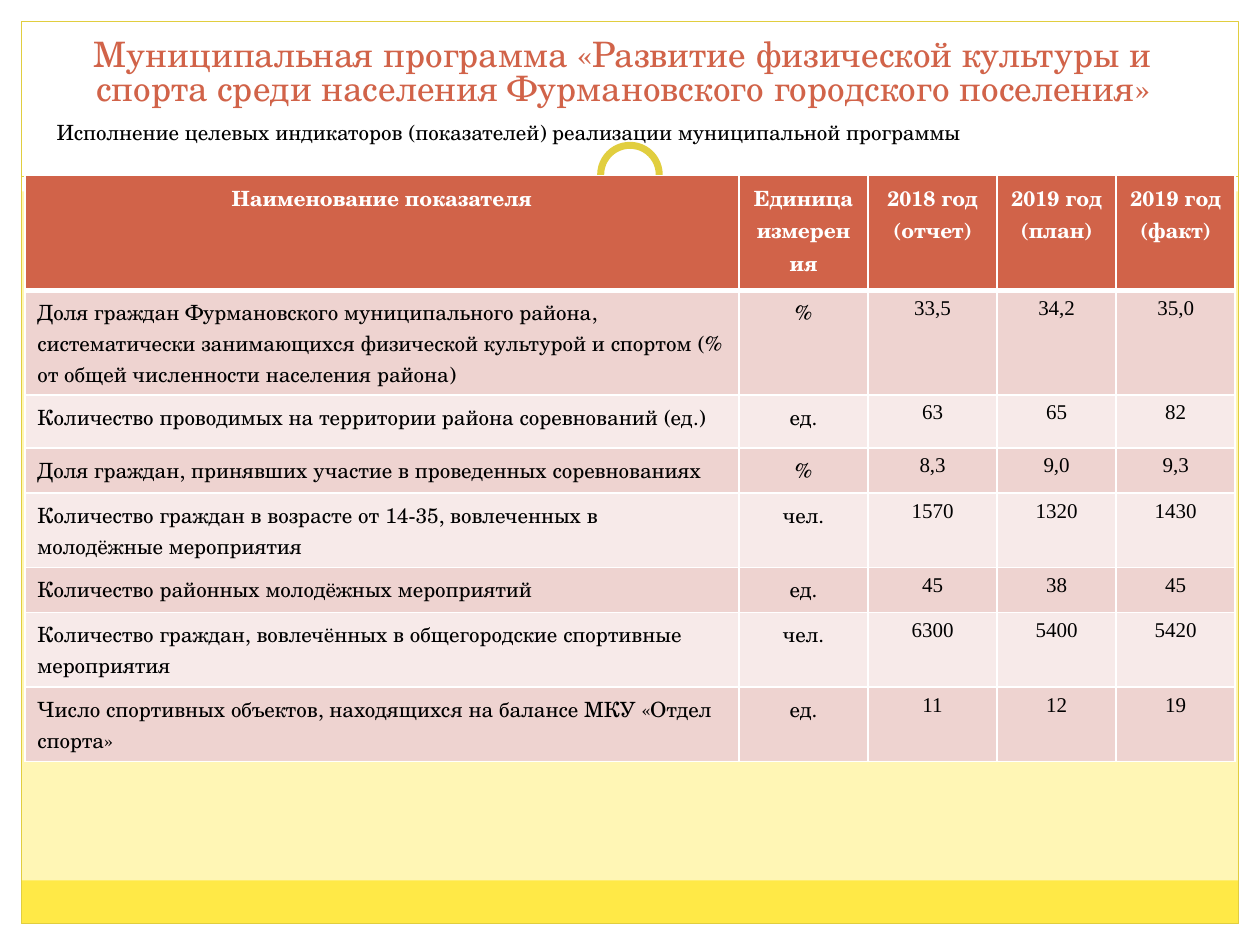
from lxml.etree import SubElement
from pptx import Presentation
from pptx.dml.color import RGBColor
from pptx.enum.dml import MSO_LINE
from pptx.enum.shapes import MSO_CONNECTOR, MSO_SHAPE
from pptx.enum.text import MSO_ANCHOR, PP_ALIGN
from pptx.oxml.ns import qn
from pptx.util import Cm, Pt

SERIF, NUMERIC = "TeX Gyre Schola", "Times New Roman"
WHITE, BLACK, RUST = "FFFFFF", "000000", "D16349"
GOLD, YELLOW, CREAM = "E1CE3F", "FFE947", "FFF6B5"
BANDS = ("EED3D0", "F7EAE9")
W, H, EDGE = 25.4, 19.05, 0.43

COL_WIDTHS = (14.4, 2.6, 2.6, 2.4, 2.4)
ROW_HEIGHTS = (2.31, 2.11, 1.07, 0.91, 1.5, 0.91, 1.5, 1.5)
ROWS = (
    ("Наименование показателя", "Единица измерения", "2018 год (отчет)",
     "2019 год (план)", "2019 год (факт)"),
    ("Доля граждан Фурмановского муниципального района, систематически "
     "занимающихся физической культурой и спортом (% от общей численности "
     "населения района)", "%", "33,5", "34,2", "35,0"),
    ("Количество проводимых на территории района соревнований (ед.)",
     "ед.", "63", "65", "82"),
    ("Доля граждан, принявших участие в проведенных соревнованиях",
     "%", "8,3", "9,0", "9,3"),
    ("Количество граждан в возрасте от 14-35, вовлеченных в молодёжные "
     "мероприятия", "чел.", "1570", "1320", "1430"),
    ("Количество районных молодёжных мероприятий", "ед.", "45", "38", "45"),
    ("Количество граждан, вовлечённых в общегородские спортивные "
     "мероприятия", "чел.", "6300", "5400", "5420"),
    ("Число спортивных объектов, находящихся на балансе МКУ «Отдел спорта»",
     "ед.", "11", "12", "19"),
)


def rgb(color):
    return RGBColor.from_string(color)


def box(left, top, width, height):
    return Cm(left), Cm(top), Cm(width), Cm(height)


def add_shape(s, kind, bounds, fill=None, line=None, weight=0.75):
    sp = s.shapes.add_shape(kind, *box(*bounds))
    sp.shadow.inherit = False
    if fill:
        sp.fill.solid()
        sp.fill.fore_color.rgb = rgb(fill)
    else:
        sp.fill.background()
    if line:
        sp.line.color.rgb = rgb(line)
        sp.line.width = Pt(weight)
    else:
        sp.line.fill.background()


def add_dashed_line(s, left, right, y):
    line = s.shapes.add_connector(MSO_CONNECTOR.STRAIGHT, Cm(left), Cm(y),
                                  Cm(right), Cm(y))
    line.line.color.rgb = rgb(GOLD)
    line.line.width = Pt(0.75)
    line.line.dash_style = MSO_LINE.SQUARE_DOT
    SubElement(line.element.spPr, qn("a:effectLst"))


def write(tf, text, size, color, align, font=SERIF, bold=False):
    tf.text = text
    p = tf.paragraphs[0]
    p.alignment = align
    f = p.runs[0].font
    f.name, f.size, f.bold = font, Pt(size), bold
    f.color.rgb = rgb(color)
    return p


def set_borders(cell, bottom):
    tc_pr = cell._tc.get_or_add_tcPr()
    for side in "LRTB":
        width = bottom if side == "B" else 1
        ln = SubElement(tc_pr, qn(f"a:ln{side}"), w=str(Pt(width)))
        fill = SubElement(ln, qn("a:solidFill"))
        SubElement(fill, qn("a:srgbClr"), val=WHITE)


def add_frame(s):
    rect, oval = MSO_SHAPE.RECTANGLE, MSO_SHAPE.OVAL
    # White margins and header band
    for bounds in ((0, H - EDGE, W, EDGE), (0, 0, W, 3.86),
                   (0, 0, EDGE, H), (W - EDGE, 0, EDGE, H)):
        add_shape(s, rect, bounds, WHITE)
    # Footer band, outline and divider
    add_shape(s, rect, (EDGE, 17.75, W - 2 * EDGE, 0.87), YELLOW)
    add_shape(s, rect, (EDGE, EDGE, W - 2 * EDGE, H - 2 * EDGE), line=GOLD)
    add_dashed_line(s, EDGE, W - EDGE, 3.56)
    # Ring on the divider
    add_shape(s, oval, (11.85, 2.67, 1.7, 1.7), WHITE)
    add_shape(s, oval, (12.11, 2.93, 1.18, 1.18), WHITE, GOLD, 4)


def add_title(s, text):
    title = s.shapes.title
    title.left, title.top, title.width, title.height = box(0.71, 0.53, 23.7, 1.78)
    tf = title.text_frame
    tf.word_wrap = True
    tf.vertical_anchor = MSO_ANCHOR.BOTTOM
    p = write(tf, text, 20, RUST, PP_ALIGN.CENTER)
    p.line_spacing = 0.8
    # Bring the title in front of the frame
    title.element.getparent().append(title.element)


def add_subtitle(s, text):
    tf = s.shapes.add_textbox(*box(0.89, 2.34, 23.62, 0.99)).text_frame
    tf.word_wrap = True
    p = write(tf, text, 12, BLACK, PP_ALIGN.LEFT)
    p.line_spacing = 0.9


def add_indicator_table(s):
    table = s.shapes.add_table(
        len(ROWS), len(COL_WIDTHS),
        *box(0.5, 3.54, sum(COL_WIDTHS), sum(ROW_HEIGHTS))).table
    for col, width in zip(table.columns, COL_WIDTHS):
        col.width = Cm(width)
    for row, height in zip(table.rows, ROW_HEIGHTS):
        row.height = Cm(height)
    for i, values in enumerate(ROWS):
        header = i == 0
        for j, value in enumerate(values):
            cell = table.cell(i, j)
            set_borders(cell, 3 if header else 1)
            cell.fill.solid()
            cell.fill.fore_color.rgb = rgb(RUST if header else BANDS[(i - 1) % 2])
            write(cell.text_frame, value, 12, WHITE if header else BLACK,
                  PP_ALIGN.CENTER if header or j else PP_ALIGN.LEFT,
                  SERIF if header or j < 2 else NUMERIC, header)


def main():
    prs = Presentation()
    prs.slide_width, prs.slide_height = Cm(W), Cm(H)
    s = prs.slides.add_slide(prs.slide_layouts[5])
    s.background.fill.solid()
    s.background.fill.fore_color.rgb = rgb(CREAM)
    add_frame(s)
    add_title(s, "Муниципальная программа «Развитие физической культуры и "
                 "спорта среди населения Фурмановского городского поселения»")
    add_subtitle(s, "Исполнение целевых индикаторов (показателей) реализации "
                    "муниципальной программы")
    add_indicator_table(s)
    prs.save("out.pptx")


if __name__ == "__main__":
    main()
